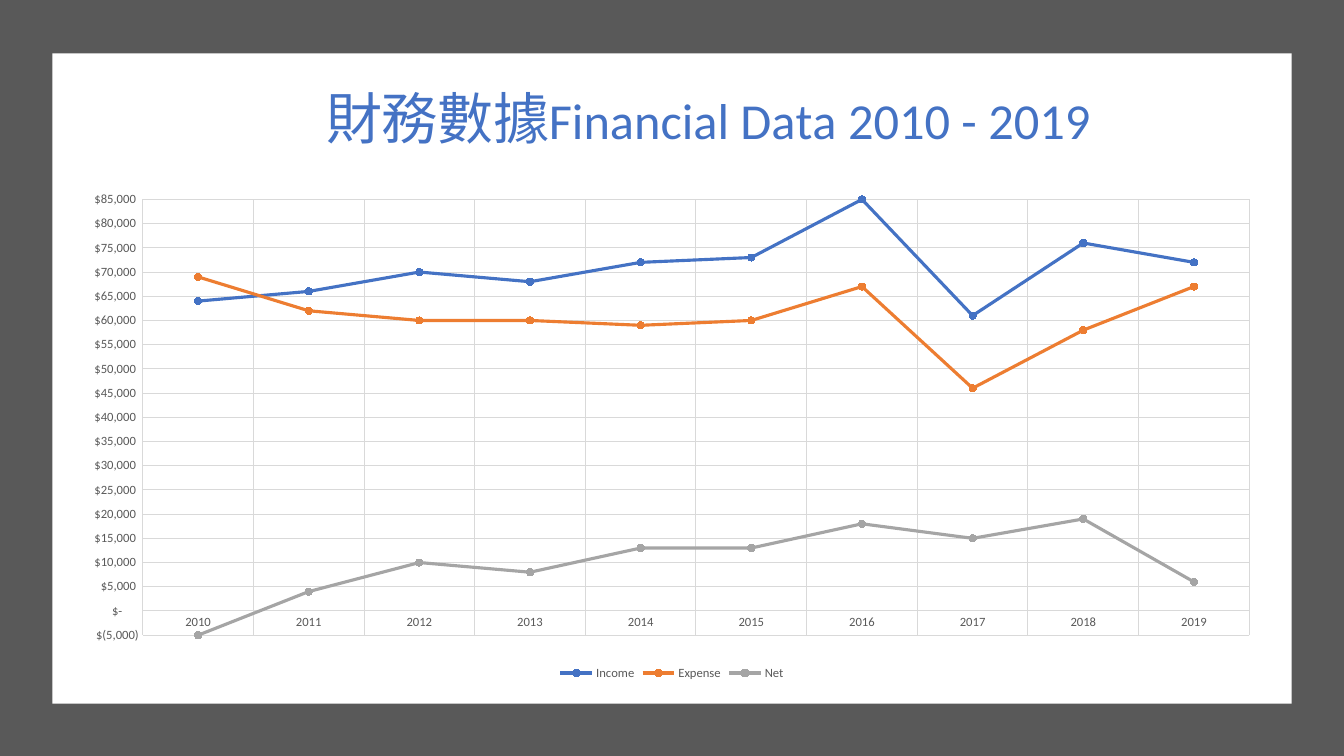
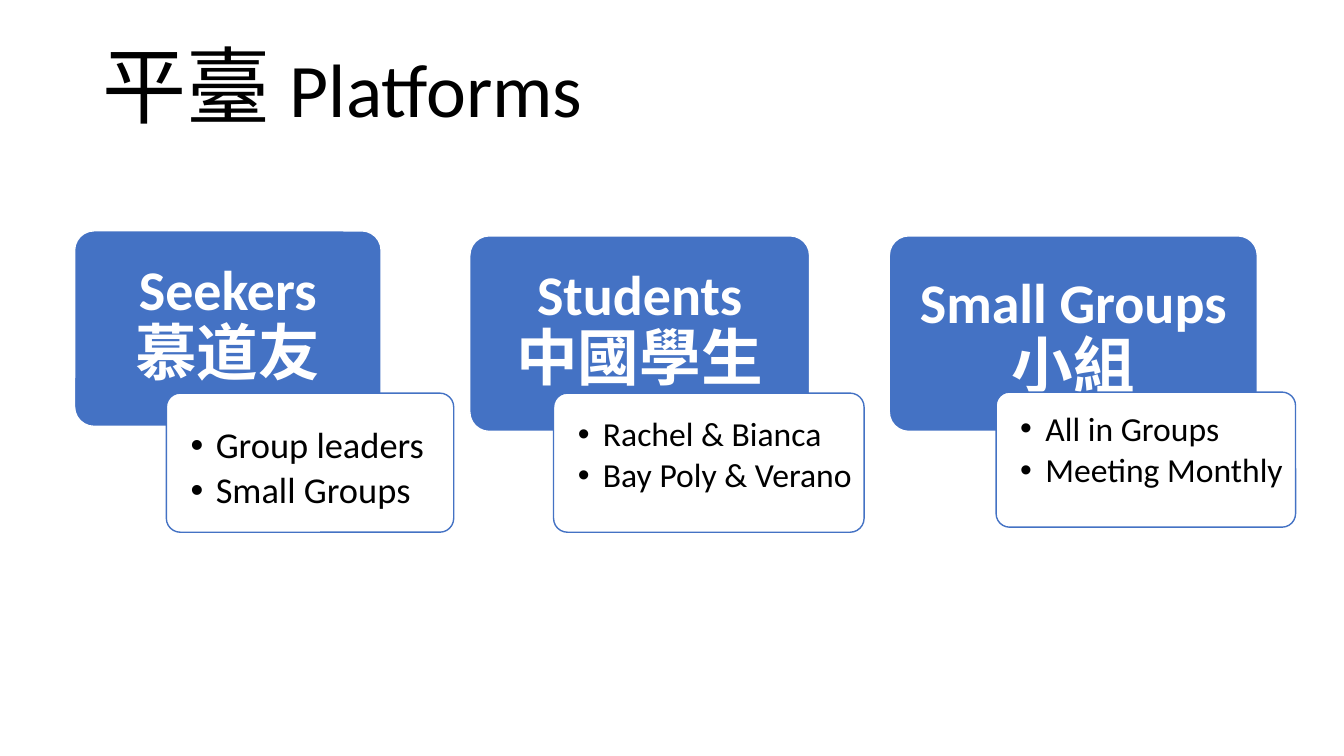
from dataclasses import dataclass
from typing import Any

from lxml.etree import SubElement
from pptx import Presentation
from pptx.chart.data import CategoryChartData
from pptx.dml.color import RGBColor
from pptx.enum.chart import XL_CHART_TYPE as ChartType
from pptx.enum.chart import XL_LEGEND_POSITION as LegendPosition
from pptx.enum.chart import XL_MARKER_STYLE as MarkerStyle
from pptx.enum.chart import XL_TICK_MARK as TickMark
from pptx.enum.shapes import MSO_SHAPE as Shape
from pptx.enum.text import MSO_ANCHOR as Anchor
from pptx.enum.text import PP_ALIGN as Align
from pptx.oxml.ns import qn
from pptx.util import Inches, Pt

BLUE, ORANGE, SILVER = "4472C4", "ED7D31", "A5A5A5"
WHITE, BLACK, GRAY, GRID = "FFFFFF", "000000", "595959", "D9D9D9"
FONT = "Calibri"
DOLLARS = r'_("$"* #,##0_);_("$"* \(#,##0\);_("$"* "-"??_);_(@_)'


@dataclass(frozen=True)
class Box:
    """A rectangle in inches."""

    left: float
    top: float
    width: float
    height: float

    def lengths(self) -> list[Any]:
        """Return the four measures as lengths."""
        return [Inches(value) for value in (self.left, self.top, self.width, self.height)]


@dataclass(frozen=True)
class Line:
    """A named series of yearly amounts in thousands."""

    name: str
    color: str
    thousands: tuple[int, ...]


@dataclass(frozen=True)
class Platform:
    """A bilingual header with an overlapping detail card."""

    english: str
    chinese: str
    header: Box
    header_inset: float
    details: tuple[str, ...]
    card: Box
    card_inset: float
    size: int


LINES = (
    Line("Income", BLUE, (64, 66, 70, 68, 72, 73, 85, 61, 76, 72)),
    Line("Expense", ORANGE, (69, 62, 60, 60, 59, 60, 67, 46, 58, 67)),
    Line("Net", SILVER, (-5, 4, 10, 8, 13, 13, 18, 15, 19, 6)),
)

PLATFORMS = (
    Platform("Seekers", "慕道友", Box(0.74, 2.29, 3.04, 1.94), 0.25,
             ("Group leaders", "Small Groups"), Box(1.65, 3.9, 2.85, 1.38), 0.3, 26),
    Platform("Students", "中國學生", Box(4.66, 2.34, 3.37, 1.94), 0.25,
             ("Rachel & Bianca", "Bay Poly & Verano"), Box(5.49, 3.9, 3.08, 1.38), 0.2, 24),
    Platform("Small Groups", "小組", Box(8.82, 2.34, 3.65, 1.94), 0.33,
             ("All in Groups", "Meeting Monthly"), Box(9.88, 3.89, 2.97, 1.34), 0.16, 24),
)


def rgb(color: str) -> RGBColor:
    """Turn a hex string into a colour."""
    return RGBColor.from_string(color)


def apply_format(target: Any, values: dict[str, Any]) -> None:
    """Set every attribute named in the dict."""
    for name, value in values.items():
        setattr(target, name, value)


def format_font(font: Any, size: float, color: str, bold: bool = False) -> None:
    """Give a font its size, colour and weight."""
    apply_format(font, {"name": FONT, "size": Pt(size), "bold": bold})
    font.color.rgb = rgb(color)


def format_line(line: Any, color: str, width: float) -> None:
    """Give a line its colour and width."""
    line.color.rgb = rgb(color)
    line.width = Pt(width)


def add_run(paragraph: Any, text: str, size: float, color: str, bold: bool = False) -> Any:
    """Append formatted text to a paragraph."""
    run = paragraph.add_run()
    run.text = text
    format_font(run.font, size, color, bold)
    return run


def add_block(slide: Any, kind: Any, box: Box, fill: str, outline: str = "") -> Any:
    """Draw a filled shape with an optional outline."""
    shape = slide.shapes.add_shape(kind, *box.lengths())
    shape.shadow.inherit = False
    shape.fill.solid()
    shape.fill.fore_color.rgb = rgb(fill)
    if outline:
        format_line(shape.line, outline, 1)
        shape.adjustments[0] = 0.1
    else:
        shape.line.fill.background()
    return shape


def format_frame(frame: Any, left: float, top: float, right: float) -> None:
    """Anchor wrapped text at the top with the given insets."""
    apply_format(frame, {
        "word_wrap": True, "vertical_anchor": Anchor.TOP,
        "margin_left": Inches(left), "margin_top": Inches(top),
        "margin_right": Inches(right), "margin_bottom": Inches(0),
    })


def place_in_chart(element: Any, **measures: float) -> None:
    """Fix a chart part at fractions of the chart's size."""
    layout = element.find(qn("c:layout"))
    if layout is None:
        layout = element.makeelement(qn("c:layout"))
        element.insert(0, layout)
    manual = SubElement(layout, qn("c:manualLayout"))
    if "w" in measures:
        SubElement(manual, qn("c:layoutTarget"), val="inner")
    for mode in ("xMode", "yMode"):
        SubElement(manual, qn(f"c:{mode}"), val="edge")
    for name, value in measures.items():
        SubElement(manual, qn(f"c:{name}"), val=str(value))


def format_axis(axis: Any) -> None:
    """Style the labels, ticks and gridlines of an axis."""
    apply_format(axis, {
        "has_major_gridlines": True,
        "major_tick_mark": TickMark.NONE, "minor_tick_mark": TickMark.NONE,
    })
    format_font(axis.tick_labels.font, 9, GRAY)
    format_line(axis.major_gridlines.format.line, GRID, 0.75)


def add_finance_chart(slide: Any, box: Box) -> None:
    """Add the line chart of income, expense and net."""
    data = CategoryChartData(number_format=DOLLARS)
    data.categories = [str(year) for year in range(2010, 2020)]
    for line in LINES:
        data.add_series(line.name, [value * 1000 for value in line.thousands])
    chart = slide.shapes.add_chart(ChartType.LINE_MARKERS, *box.lengths(), data).chart
    format_font(chart.font, 10, BLACK)

    title = chart.chart_title
    paragraph = title.text_frame.paragraphs[0]
    add_run(paragraph, "財務數據", 40, BLUE).font.name = "Lato"
    add_run(paragraph, "Financial Data 2010 - 2019", 36, BLUE)
    place_in_chart(title._element, x=0.21, y=0)
    place_in_chart(chart._chartSpace.chart.plotArea, x=0.06, y=0.21, w=0.92, h=0.71)

    chart.has_legend = True
    apply_format(chart.legend, {"position": LegendPosition.BOTTOM, "include_in_layout": False})
    format_font(chart.legend.font, 9, GRAY)

    for axis in (chart.category_axis, chart.value_axis):
        format_axis(axis)
    format_line(chart.category_axis.format.line, GRID, 0.75)
    apply_format(chart.value_axis, {
        "minimum_scale": -5000, "maximum_scale": 85000, "major_unit": 5000,
    })
    chart.value_axis.format.line.fill.background()
    apply_format(chart.value_axis.tick_labels, {
        "number_format": DOLLARS, "number_format_is_linked": False,
    })

    chart.plots[0].vary_by_categories = False
    for series, line in zip(chart.plots[0].series, LINES):
        series.smooth = False
        format_line(series.format.line, line.color, 2.25)
        apply_format(series.marker, {"style": MarkerStyle.CIRCLE, "size": 5})
        series.marker.format.fill.solid()
        series.marker.format.fill.fore_color.rgb = rgb(line.color)
        format_line(series.marker.format.line, line.color, 0.75)


def add_header(slide: Any, platform: Platform) -> None:
    """Draw the blue header of a platform."""
    shape = add_block(slide, Shape.ROUNDED_RECTANGLE, platform.header, BLUE, WHITE)
    format_frame(shape.text_frame, 0.1, platform.header_inset, 0.1)
    paragraph = shape.text_frame.paragraphs[0]
    apply_format(paragraph, {"alignment": Align.CENTER, "line_spacing": 0.9})
    add_run(paragraph, platform.english, 40, WHITE, True)
    paragraph.add_line_break()
    add_run(paragraph, platform.chinese, 44, WHITE, True)


def add_card(slide: Any, platform: Platform) -> None:
    """Draw the bulleted detail card of a platform."""
    shape = add_block(slide, Shape.ROUNDED_RECTANGLE, platform.card, WHITE, BLUE)
    frame = shape.text_frame
    format_frame(frame, 0.2, platform.card_inset, 0)
    for index, detail in enumerate(platform.details):
        paragraph = frame.add_paragraph() if index else frame.paragraphs[0]
        apply_format(paragraph, {
            "alignment": Align.LEFT, "line_spacing": 0.9,
            "space_after": Pt(platform.size * 0.15),
        })
        add_run(paragraph, detail, platform.size, BLACK)
        properties = paragraph._p.get_or_add_pPr()
        properties.set("marL", str(Inches(0.25)))
        properties.set("indent", str(Inches(-0.25)))
        SubElement(properties, qn("a:buFont"), typeface="Arial")
        SubElement(properties, qn("a:buChar"), char="•")


def build_finance(presentation: Any) -> None:
    """Build the slide with the finance chart."""
    slide = presentation.slides.add_slide(presentation.slide_layouts[6])
    add_block(slide, Shape.RECTANGLE, Box(0, 0, 13.33, 7.5), GRAY)
    add_block(slide, Shape.RECTANGLE, Box(0.52, 0.53, 12.29, 6.45), WHITE)
    add_finance_chart(slide, Box(0.7, 0.7, 11.93, 6.09))


def build_platforms(presentation: Any) -> None:
    """Build the slide with the three platforms."""
    slide = presentation.slides.add_slide(presentation.slide_layouts[5])
    title = slide.shapes.title
    apply_format(title, dict(zip(("left", "top", "width", "height"),
                                 Box(0.92, 0.4, 11.5, 1.45).lengths())))
    title.text_frame.vertical_anchor = Anchor.TOP
    paragraph = title.text_frame.paragraphs[0]
    apply_format(paragraph, {"alignment": Align.LEFT, "line_spacing": 0.9})
    add_run(paragraph, "平臺 ", 60, BLACK)
    add_run(paragraph, "Platforms", 54, BLACK)
    for platform in PLATFORMS:
        add_header(slide, platform)
        add_card(slide, platform)


def main() -> None:
    """Build and save the presentation."""
    presentation = Presentation()
    apply_format(presentation, {"slide_width": Inches(13.33), "slide_height": Inches(7.5)})
    build_finance(presentation)
    build_platforms(presentation)
    presentation.save("out.pptx")


if __name__ == "__main__":
    main()
